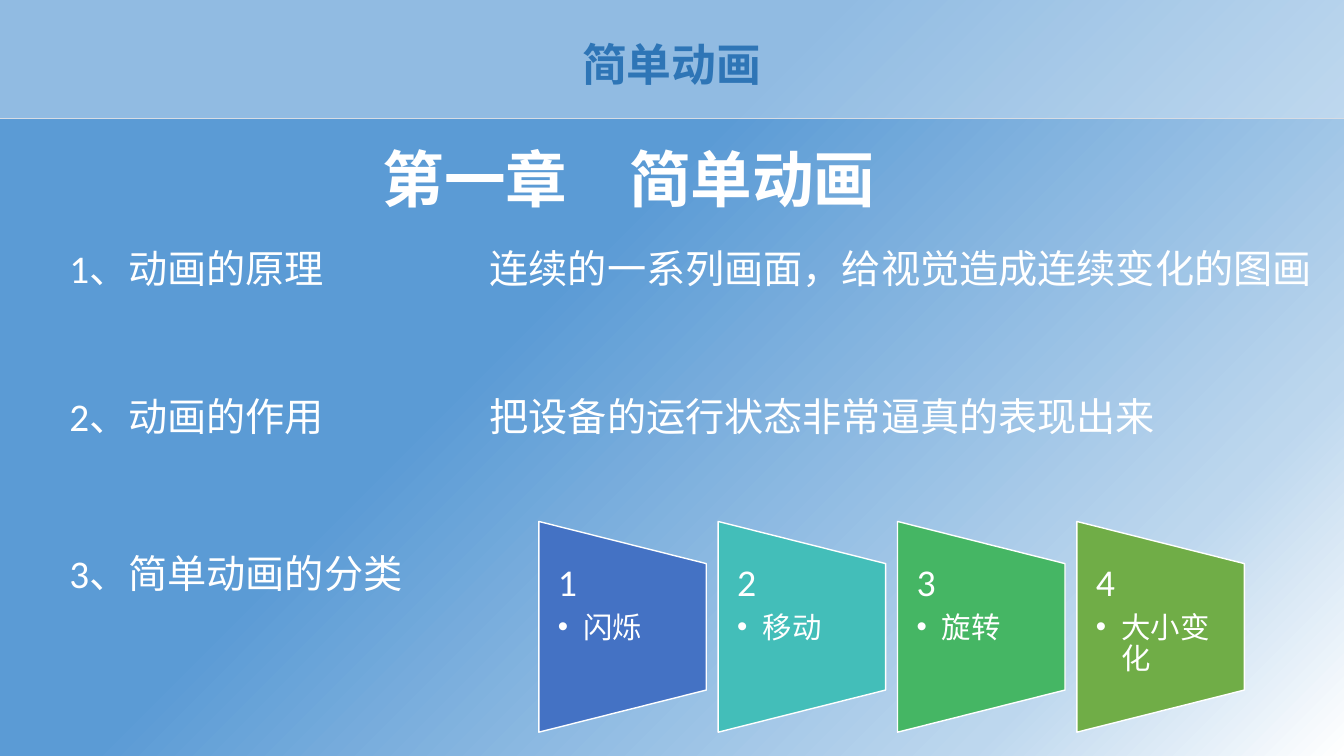
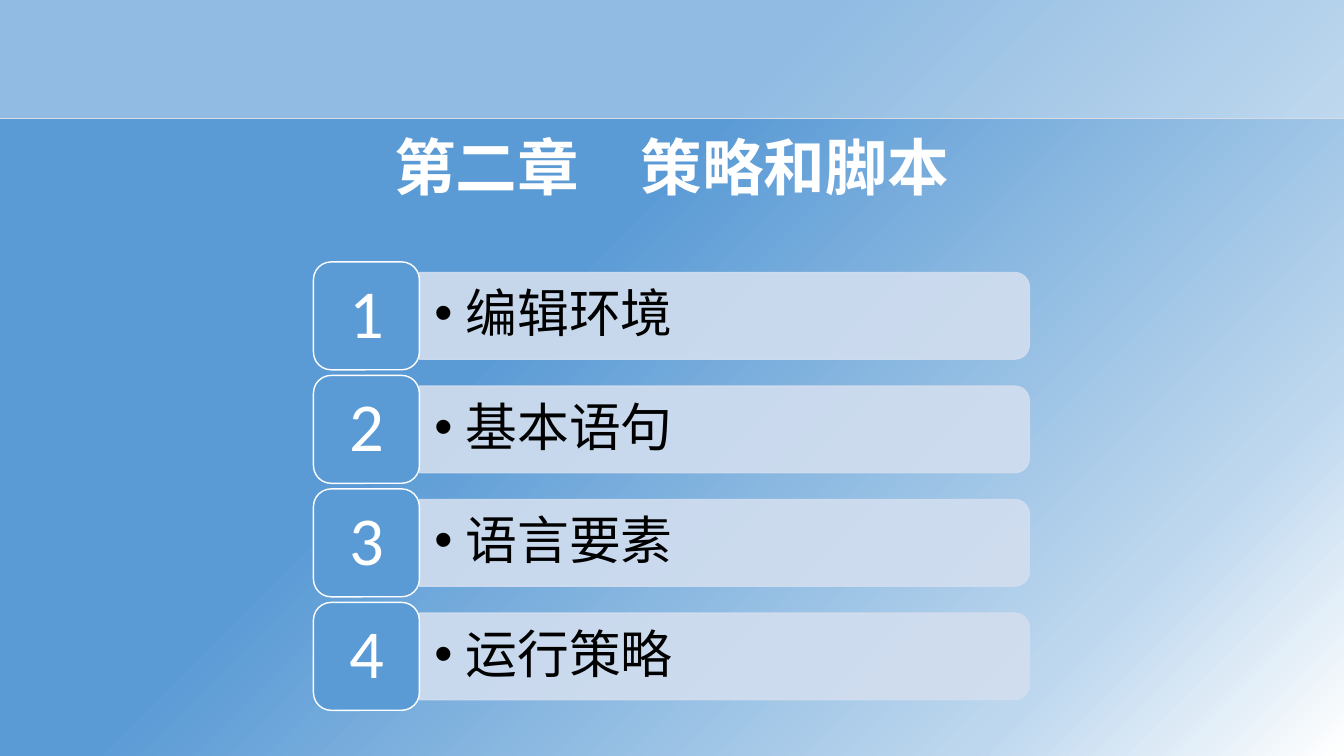
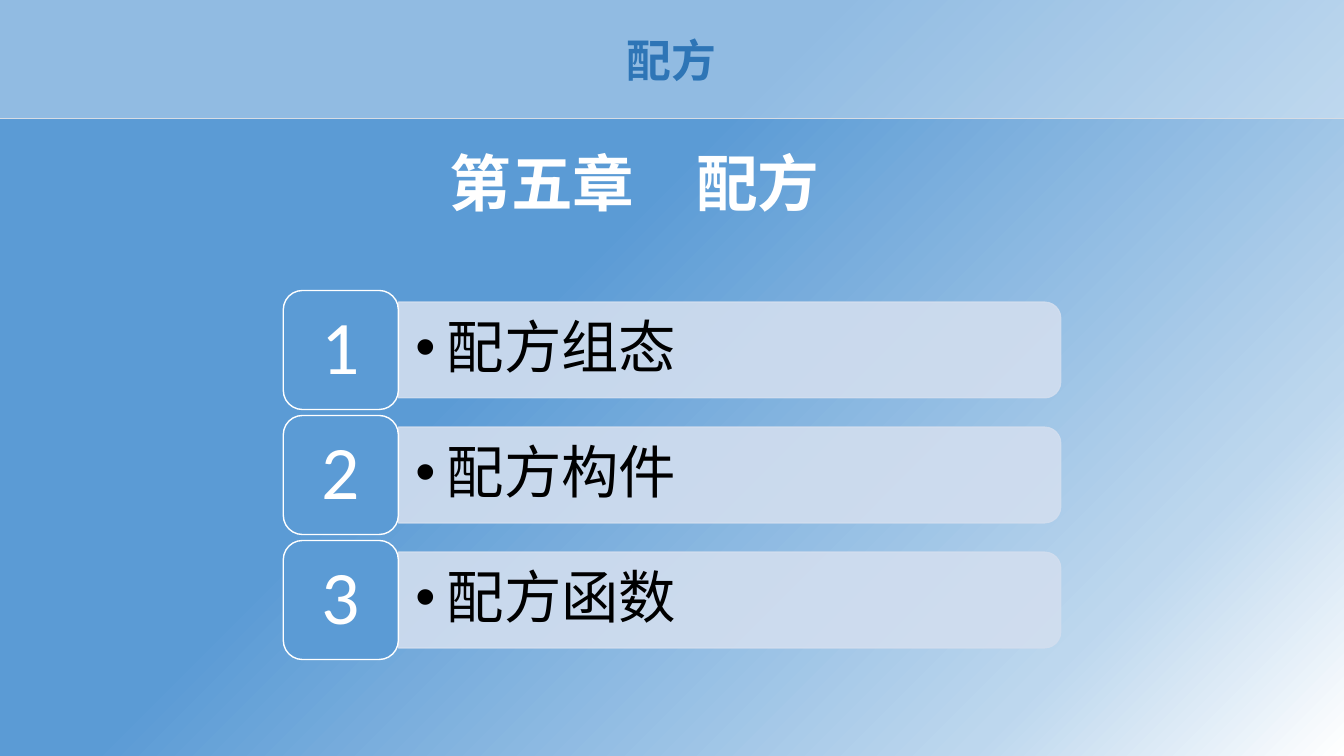
"""Build three chapter slides on a shared blue gradient with a header band."""
from dataclasses import dataclass
from typing import Optional

from lxml.etree import SubElement
from pptx import Presentation
from pptx.dml.color import RGBColor
from pptx.enum.shapes import MSO_SHAPE
from pptx.enum.text import MSO_ANCHOR, MSO_AUTO_SIZE, PP_ALIGN
from pptx.oxml import parse_xml
from pptx.oxml.ns import nsdecls, qn
from pptx.util import Cm, Pt


@dataclass(frozen=True)
class Theme:
    white: str = "FFFFFF"
    black: str = "000000"
    pale_blue: str = "BDD7EE"
    blue: str = "5B9BD5"
    header_blue: str = "2E75B6"
    band_edge: str = "D6DCE5"
    bar: str = "D2DEEF"
    cards: tuple = ("4472C4", "43BEB9", "45B664", "70AD47")
    cjk: str = "Noto Sans CJK SC"
    body: str = "Calibri"
    header_size: int = 32
    title_size: int = 44
    body_size: int = 28
    card_number_size: int = 27
    card_label_size: int = 21


@dataclass(frozen=True)
class Box:
    left: float
    top: float
    width: float
    height: float

    def emu(self) -> tuple:
        return Cm(self.left), Cm(self.top), Cm(self.width), Cm(self.height)

    def before_quarter_turn(self) -> "Box":
        shift = (self.width - self.height) / 2
        return Box(self.left + shift, self.top - shift, self.height, self.width)


@dataclass(frozen=True)
class Topic:
    label: str
    top: float
    detail: str = ""


@dataclass(frozen=True)
class Agenda:
    entries: tuple
    tile: Box
    pitch: float
    bar_length: float
    bar_height: float
    inset: float
    number_size: int
    label_size: int


THEME = Theme()
TOPICS = (
    Topic("1、动画的原理", 6.02, "连续的一系列画面，给视觉造成连续变化的图画"),
    Topic("2、动画的作用", 9.75, "把设备的运行状态非常逼真的表现出来"),
    Topic("3、简单动画的分类", 13.72),
)
ANIMATION_KINDS = ("闪烁", "移动", "旋转", "大小变化")
SCRIPT_AGENDA = Agenda(("编辑环境", "基本语句", "语言要素", "运行策略"),
                       Box(7.9, 6.6, 2.67, 2.72), 2.86, 15.37, 2.18, 0.38, 49, 37)
RECIPE_AGENDA = Agenda(("配方组态", "配方构件", "配方函数"),
                       Box(7.14, 7.32, 2.9, 3), 3.15, 16.69, 2.41, 0.43, 54, 41)


def write(frame, text: str, *, size: float, color: str = THEME.white, font: str = THEME.body,
          bold: bool = False, align=PP_ALIGN.LEFT, spacing: Optional[float] = None,
          after: float = 0, bullet_indent: Optional[float] = None) -> None:
    paragraph = frame.paragraphs[0] if not frame.text else frame.add_paragraph()
    paragraph.alignment = align
    paragraph.space_after = Pt(after)
    if spacing:
        paragraph.line_spacing = spacing
    if bullet_indent:
        properties = paragraph._p.get_or_add_pPr()
        properties.set("marL", str(Cm(bullet_indent)))
        properties.set("indent", str(-Cm(bullet_indent)))
        SubElement(properties, qn("a:buFont")).set("typeface", "Arial")
        SubElement(properties, qn("a:buChar")).set("char", "•")
    run = paragraph.add_run()
    run.text = text
    run.font.size = Pt(size)
    run.font.bold = bold
    run.font.color.rgb = RGBColor.from_string(color)
    run.font.name = font
    SubElement(run._r.get_or_add_rPr(), qn("a:ea")).set("typeface", THEME.cjk)


def add_frame(slide, box: Box, *, inset: Optional[float] = None, anchor=MSO_ANCHOR.TOP):
    frame = slide.shapes.add_textbox(*box.emu()).text_frame
    frame.word_wrap = True
    frame.vertical_anchor = anchor
    if inset is None:
        frame.auto_size = MSO_AUTO_SIZE.SHAPE_TO_FIT_TEXT
    else:
        frame.margin_left = frame.margin_right = Cm(inset)
        frame.margin_top = frame.margin_bottom = 0
    return frame


def add_panel(slide, kind, box: Box, *, fill: str, edge: str, rotation: int = 0,
              fill_alpha: int = 100, edge_alpha: int = 100):
    placed = box.before_quarter_turn() if rotation else box
    panel = slide.shapes.add_shape(kind, *placed.emu())
    panel.rotation = rotation
    panel.shadow.inherit = False
    panel.line.width = Pt(1)
    for paint, color, alpha in ((panel.fill, fill, fill_alpha), (panel.line.fill, edge, edge_alpha)):
        paint.solid()
        paint.fore_color.rgb = RGBColor.from_string(color)
        if alpha < 100:
            solid = paint._xPr.find(qn("a:solidFill"))
            SubElement(solid[0], qn("a:alpha")).set("val", str(alpha * 1000))
    return panel


def style_master(master, slide) -> None:
    fill = master.background.fill
    fill.solid()
    solid = fill._xPr.find(qn("a:solidFill"))
    stops = ((0, THEME.white), (18, THEME.pale_blue), (60, THEME.blue))
    gradient = "".join(f'<a:gs pos="{place * 1000}"><a:srgbClr val="{color}"/></a:gs>'
                       for place, color in stops)
    fill._xPr.replace(solid, parse_xml(
        f'<a:gradFill {nsdecls("a")} rotWithShape="1"><a:gsLst>{gradient}</a:gsLst>'
        '<a:path path="circle"><a:fillToRect l="100000" t="100000"/></a:path>'
        '<a:tileRect r="-100000" b="-100000"/></a:gradFill>'))
    band = add_panel(slide, MSO_SHAPE.RECTANGLE, Box(-0.03, -0.03, 33.91, 3.02),
                     fill=THEME.white, edge=THEME.band_edge, fill_alpha=33)
    band._element.nvSpPr.cNvPr.set("id", "20")
    master.shapes._spTree.append(band._element)


def add_header(slide, text: str, box: Box) -> None:
    write(add_frame(slide, box), text, size=THEME.header_size, color=THEME.header_blue,
          font=THEME.cjk, bold=True, align=PP_ALIGN.CENTER)


def add_title(slide, text: str, box: Box, *, font: str = THEME.cjk) -> None:
    write(add_frame(slide, box), text, size=THEME.title_size, font=font, bold=True,
          align=PP_ALIGN.CENTER)


def add_topics(slide) -> None:
    for topic in TOPICS:
        write(add_frame(slide, Box(1.5, topic.top, 9.63, 1.45)), topic.label, size=THEME.body_size)
        if topic.detail:
            write(add_frame(slide, Box(12.09, topic.top, 21.44, 1.45)), topic.detail,
                  size=THEME.body_size)


def add_kind_cards(slide) -> None:
    for index, (kind, color) in enumerate(zip(ANIMATION_KINDS, THEME.cards)):
        left = 13.58 + index * 4.52
        add_panel(slide, MSO_SHAPE.FLOWCHART_MANUAL_OPERATION, Box(left, 13.14, 4.22, 5.31),
                  fill=color, edge=THEME.white, rotation=270)
        frame = add_frame(slide, Box(left, 14.2, 4.22, 3.2), inset=0.48)
        write(frame, str(index + 1), size=THEME.card_number_size, spacing=0.9, after=6)
        write(frame, kind, size=THEME.card_label_size, spacing=0.9, bullet_indent=0.64)


def add_agenda(slide, agenda: Agenda) -> None:
    tile = agenda.tile
    for index, entry in enumerate(agenda.entries):
        top = tile.top + index * agenda.pitch
        bar = Box(tile.left + tile.width, top + (tile.height - agenda.bar_height) / 2,
                  agenda.bar_length, agenda.bar_height)
        add_panel(slide, MSO_SHAPE.ROUND_2_SAME_RECTANGLE, bar, fill=THEME.bar, edge=THEME.bar,
                  rotation=90, fill_alpha=90, edge_alpha=90)
        write(add_frame(slide, bar, inset=agenda.inset, anchor=MSO_ANCHOR.MIDDLE), entry,
              size=agenda.label_size, color=THEME.black, spacing=0.9, bullet_indent=0.79)
        number = add_panel(slide, MSO_SHAPE.ROUNDED_RECTANGLE,
                           Box(tile.left, top, tile.width, tile.height),
                           fill=THEME.blue, edge=THEME.white).text_frame
        number.vertical_anchor = MSO_ANCHOR.MIDDLE
        write(number, str(index + 1), size=agenda.number_size, align=PP_ALIGN.CENTER, spacing=0.9)


def main() -> None:
    deck = Presentation()
    deck.slide_width, deck.slide_height = Cm(33.87), Cm(19.05)
    animation, scripts, recipes = (deck.slides.add_slide(deck.slide_layouts[6]) for _ in range(3))
    style_master(deck.slide_master, animation)

    add_header(animation, "简单动画", Box(10.01, 0.79, 13.84, 1.63))
    add_title(animation, "第一章　简单动画", Box(8.94, 3.43, 13.84, 2.13))
    add_topics(animation)
    add_kind_cards(animation)

    add_title(scripts, "第二章　策略和脚本", Box(0.13, 3.12, 33.6, 2.13), font="Arial")
    add_agenda(scripts, SCRIPT_AGENDA)

    add_header(recipes, "配方", Box(9.32, 0.71, 15.21, 1.63))
    add_title(recipes, "第五章　配方", Box(10.13, 3.53, 11.73, 2.13))
    add_agenda(recipes, RECIPE_AGENDA)

    deck.save("out.pptx")


if __name__ == "__main__":
    main()
